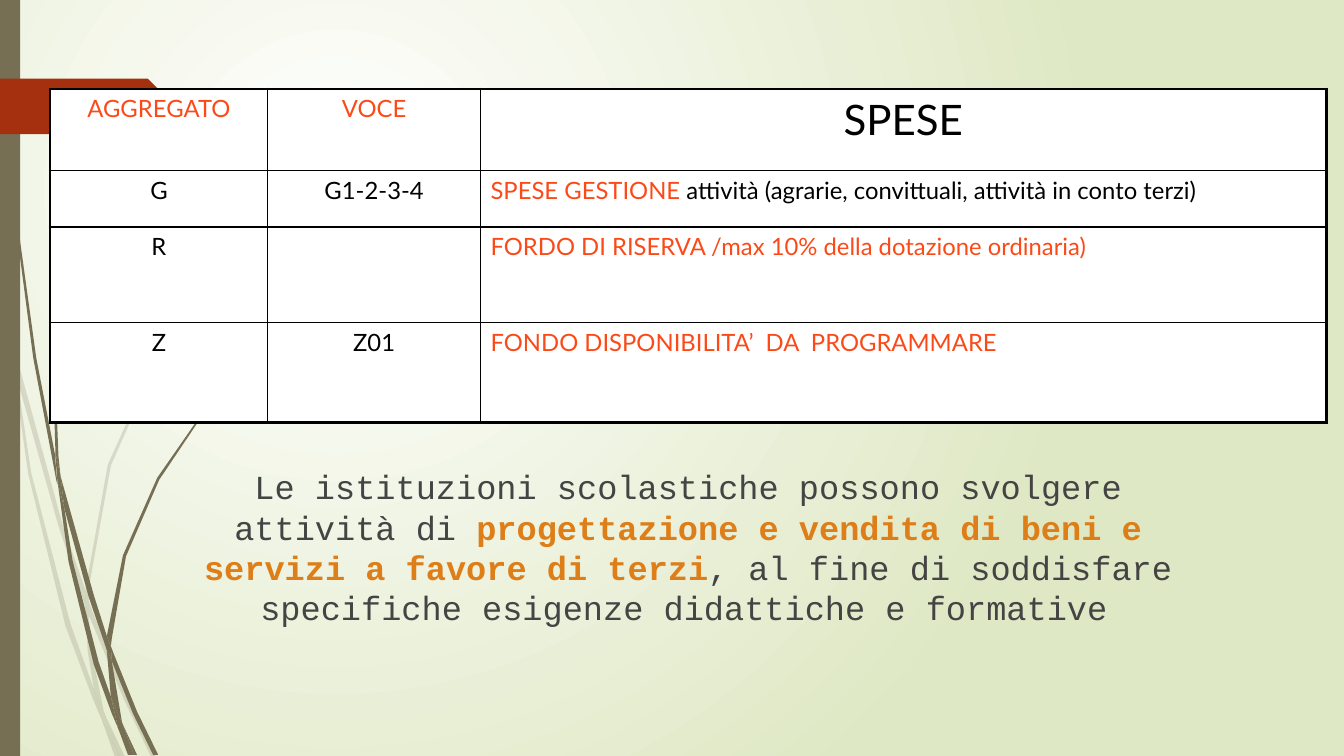
"""Build the slide on expense aggregates and sales to third parties."""
import pptx
import pptx.dml.color
import pptx.enum.shapes
import pptx.enum.text
import pptx.oxml
import pptx.oxml.ns
import pptx.util

CELL = pptx.util.Inches(0.1)
COLUMNS, ROWS = 133.33, 75
NS = pptx.oxml.ns.nsdecls("a")
SHAPE = pptx.enum.shapes.MSO_SHAPE
CENTER = pptx.enum.text.PP_ALIGN.CENTER
LEFT = pptx.enum.text.PP_ALIGN.LEFT
OLIVE, RUST, ORANGE, BLACK = "766F54", "A53010", "FB4A18", "000000"
GREY, AMBER, WHITE = "444444", "DE7E18", "FFFFFF"
BODY = {"name": "Lato", "size": pptx.util.Pt(17)}
HEADING = {"name": "Lato", "size": pptx.util.Pt(30)}
NOTE = {"name": "Courier New", "size": pptx.util.Pt(24), "bold": False}
NOTE_BOLD = {**NOTE, "bold": True}
NOTE_END = {**NOTE, "name": "Lato"}

PALE_WISPS = [
    [(1.1, 35), (0.9, 32.2), (0, 28.2), (0, 29.9), (1, 34.4)],
    [(5.8, 52.2), (8.4, 59.9), (8.5, 58.6), (6.2, 52), (1.4, 34.5), (1.7, 37.6)],
    [(9.2, 60.7), (8.8, 59.6), (8.8, 61), (12.3, 69.4), (15, 75.1), (15.5, 75.1),
     (12.7, 69.2)],
    [(11.9, 75.1), (12.4, 75.1), (10.5, 71.1)],
    [(9.3, 68.3), (7, 61.9), (3.1, 46.9), (1.7, 37.6), (1.1, 35), (2.8, 47),
     (6.5, 62.1), (9.2, 69.3), (10.1, 71.4), (9.9, 70.7)],
    [(8.4, 59.9), (8.7, 64.6), (9.3, 68.3), (9.6, 69.2), (10.5, 71.1), (10.3, 70.6),
     (9.1, 64.6), (8.8, 61), (8.8, 60.8)],
    [(8.8, 58.4), (11, 46.2), (16, 34.9), (22.9, 24.5), (26.8, 19.8), (29, 17.5),
     (31.2, 15.4), (31.2, 15.3), (28.9, 17.5), (26.8, 19.7), (22.8, 24.4),
     (15.8, 34.8), (10.7, 46.1), (8.5, 58.4), (8.5, 58.6), (8.8, 59.6)],
    [(10.1, 71.4), (11.4, 75.1), (11.9, 75.1)],
    [(8.8, 60.8), (8.8, 61), (8.8, 59.6), (8.5, 58.6), (8.4, 59.9)],
    [(9.6, 69.2), (9.3, 68.3), (9.9, 70.7), (10.1, 71.4), (11.9, 75.1), (10.5, 71.1)],
]
DARK_WISPS = [
    [(0.7, 11), (1.7, 23.3), (3.3, 35.5), (5.6, 47.7), (5.7, 48.1), (5.5, 45.7),
     (5.5, 45.3), (3.6, 35.5), (1.9, 23.2), (0.8, 10.9), (0.5, 4.8), (0.4, 0),
     (0.3, 0), (0.4, 4.8)],
    [(8.8, 59.2), (10.6, 64.5), (10.6, 63.1), (9.3, 59), (6, 47.2), (6.4, 50.5)],
    [(11.3, 64.9), (11, 64.1), (11.1, 65.6), (13.2, 70.8), (15.2, 74.9), (15.7, 74.9),
     (13.6, 70.6)],
    [(11, 69.1), (9.8, 65.7), (7.2, 55.6), (6.4, 50.5), (5.7, 47.7), (6.8, 55.7),
     (9.3, 65.9), (11.1, 70.8), (11.7, 72.2), (11.6, 71.7)],
    [(6, 47.2), (5.8, 45.3), (5.4, 34.9), (5.8, 24.5), (6.3, 19.3), (7, 14.1),
     (6.2, 19.3), (5.6, 24.5), (5.2, 34.9), (5.5, 44.9)],
    [(13.3, 74.9), (13.6, 74.9), (12.2, 71.9)],
    [(5.7, 47.7), (6.4, 50.5), (6, 47.2), (5.5, 44.9), (5.5, 45.3)],
    [(11.1, 63.3), (12.5, 55.2), (15.8, 47.6), (20.5, 40.6), (23.1, 37.4),
     (24.5, 35.9), (26.1, 34.4), (26, 34.4), (24.5, 35.8), (23.1, 37.3), (20.4, 40.5),
     (15.6, 47.4), (12.2, 55.1), (10.6, 63.1), (11, 64.1)],
    [(11.7, 72.2), (12.7, 74.9), (13.1, 74.9)],
    [(10.6, 64.5), (11, 69.1), (11.6, 70.6), (12.2, 71.9), (12.1, 71.6), (11.1, 65.6),
     (10.9, 65.1)],
    [(10.6, 64.5), (10.9, 65.1), (11.1, 65.6), (11, 64.1), (10.6, 63.1)],
    [(11.6, 70.6), (11, 69.1), (11.6, 71.7), (11.7, 72.2), (13, 74.9), (13.3, 74.9),
     (12.2, 71.9)],
]

TABLE_COLUMNS = [21.6, 21.1, 83.9]
TABLE_ROWS = [8.1, 5.6, 9.5, 9.9]
EXPENSES = [
    [[("AGGREGATO", ORANGE, BODY)], [("VOCE", ORANGE, BODY)], [("SPESE", BLACK, HEADING)]],
    [[("G", BLACK, BODY)], [("G1-2-3-4", BLACK, BODY)],
     [("SPESE GESTIONE", ORANGE, BODY),
      (" attività (agrarie, convittuali, attività in conto terzi)", BLACK, BODY)]],
    [[("R", BLACK, BODY)], [],
     [("FORDO DI RISERVA /max 10% della dotazione ordinaria)", ORANGE, BODY)]],
    [[("Z", BLACK, BODY)], [("Z01", BLACK, BODY)],
     [("FONDO DISPONIBILITA’  DA  PROGRAMMARE", ORANGE, BODY)]],
]
THIRD_PARTIES = [
    ("Le istituzioni scolastiche possono svolgere attività di ", GREY, NOTE),
    ("progettazione e vendita di beni e servizi a favore di terzi", AMBER, NOTE_BOLD),
    (", al fine di soddisfare specifiche esigenze didattiche e formative", GREY, NOTE),
    (" ", GREY, NOTE_END),
]


def grid(*cells):
    """Turn counts of grid cells into lengths."""
    return [pptx.util.Emu(round(c * CELL)) for c in cells]


def paint(fill, color):
    """Give a fill one solid colour."""
    fill.solid()
    fill.fore_color.rgb = pptx.dml.color.RGBColor.from_string(color)


def style(obj, values):
    """Set each named format value on an object."""
    for name, value in values.items():
        setattr(obj, name, value)


def write(tf, runs, align):
    """Write formatted runs into the first paragraph of a text frame."""
    p = tf.paragraphs[0]
    p.alignment = align
    for text, color, font in runs:
        r = p.add_run()
        r.text = text
        style(r.font, font)
        paint(r.font.fill, color)


def finish(sp, color):
    """Leave a shape with a flat fill only."""
    sp.shadow.inherit = False
    paint(sp.fill, color)
    sp.line.fill.background()


def add_block(s, kind, box, color):
    """Add a flat preset shape."""
    finish(s.shapes.add_shape(kind, *grid(*box)), color)


def add_wisps(s, outlines, alpha):
    """Add a group of blades of grass with one opacity in percent."""
    group = s.shapes.add_group_shape()
    for outline in outlines:
        start, *rest = [grid(*point) for point in outline]
        builder = group.shapes.build_freeform(*start)
        builder.add_line_segments(rest, close=True)
        sp = builder.convert_to_shape()
        finish(sp, OLIVE)
        if alpha < 100:
            color = sp.element.xpath("./p:spPr/a:solidFill/a:srgbClr")[0]
            color.append(pptx.oxml.parse_xml(f'<a:alpha {NS} val="{alpha * 1000}"/>'))


def add_background(s):
    """Shade the background outwards from its upper left quarter."""
    fill = s.background.fill
    fill.gradient()
    for stop, color in zip(fill.gradient_stops, (WHITE, "DFE8C4")):
        stop.color.rgb = pptx.dml.color.RGBColor.from_string(color)
    gradient = s.element.xpath(".//p:bg//a:gradFill")[0]
    for lin in gradient.xpath("./a:lin"):
        gradient.remove(lin)
    gradient.append(pptx.oxml.parse_xml(
        f'<a:path {NS} path="circle"><a:fillToRect l="50000" t="50000" '
        'r="100000" b="100000"/></a:path>'))


def add_borders(cell, outer):
    """Rule a cell, thicker on the sides that face outwards."""
    props = cell._tc.get_or_add_tcPr()
    for i, (side, thick) in enumerate(outer.items()):
        width = pptx.util.Pt(2.25 if thick else 1)
        props.insert(i, pptx.oxml.parse_xml(
            f'<a:ln{side} {NS} w="{width}"><a:solidFill><a:srgbClr val="{BLACK}"/>'
            f'</a:solidFill></a:ln{side}>'))


def add_expense_table(s):
    """Add the table of expense aggregates."""
    box = grid(4.97, 8.82, sum(TABLE_COLUMNS), sum(TABLE_ROWS))
    last_row, last_col = len(TABLE_ROWS) - 1, len(TABLE_COLUMNS) - 1
    table = s.shapes.add_table(last_row + 1, last_col + 1, *box).table
    style(table, {"first_row": False, "horz_banding": False})
    for column, width in zip(table.columns, grid(*TABLE_COLUMNS)):
        column.width = width
    for row, height in zip(table.rows, grid(*TABLE_ROWS)):
        row.height = height
    for i, row in enumerate(EXPENSES):
        for j, runs in enumerate(row):
            cell = table.cell(i, j)
            paint(cell.fill, WHITE)
            write(cell.text_frame, runs, LEFT if i and j == last_col else CENTER)
            add_borders(cell, {"L": j == 0, "R": j == last_col,
                               "T": i == 0, "B": i == last_row})


def add_note(s, box, runs):
    """Add a centred text box without margins."""
    tf = s.shapes.add_textbox(*grid(*box)).text_frame
    style(tf, {"word_wrap": True, "vertical_anchor": pptx.enum.text.MSO_ANCHOR.MIDDLE,
               "margin_left": 0, "margin_top": 0, "margin_right": 0, "margin_bottom": 0})
    write(tf, runs, CENTER)


def main():
    """Build and save the slide."""
    prs = pptx.Presentation()
    prs.slide_width, prs.slide_height = grid(COLUMNS, ROWS)
    s = prs.slides.add_slide(prs.slide_layouts[6])
    add_background(s)
    add_wisps(s, PALE_WISPS, 20)
    add_wisps(s, DARK_WISPS, 100)
    add_block(s, SHAPE.RECTANGLE, (0, 0, 2, ROWS), OLIVE)
    add_block(s, SHAPE.PENTAGON, (0, 7.8, 17.4, 5.5), RUST)
    add_expense_table(s)
    add_note(s, (18, 48.2, 100.5, 12.1), THIRD_PARTIES)
    prs.save("out.pptx")


if __name__ == "__main__":
    main()
